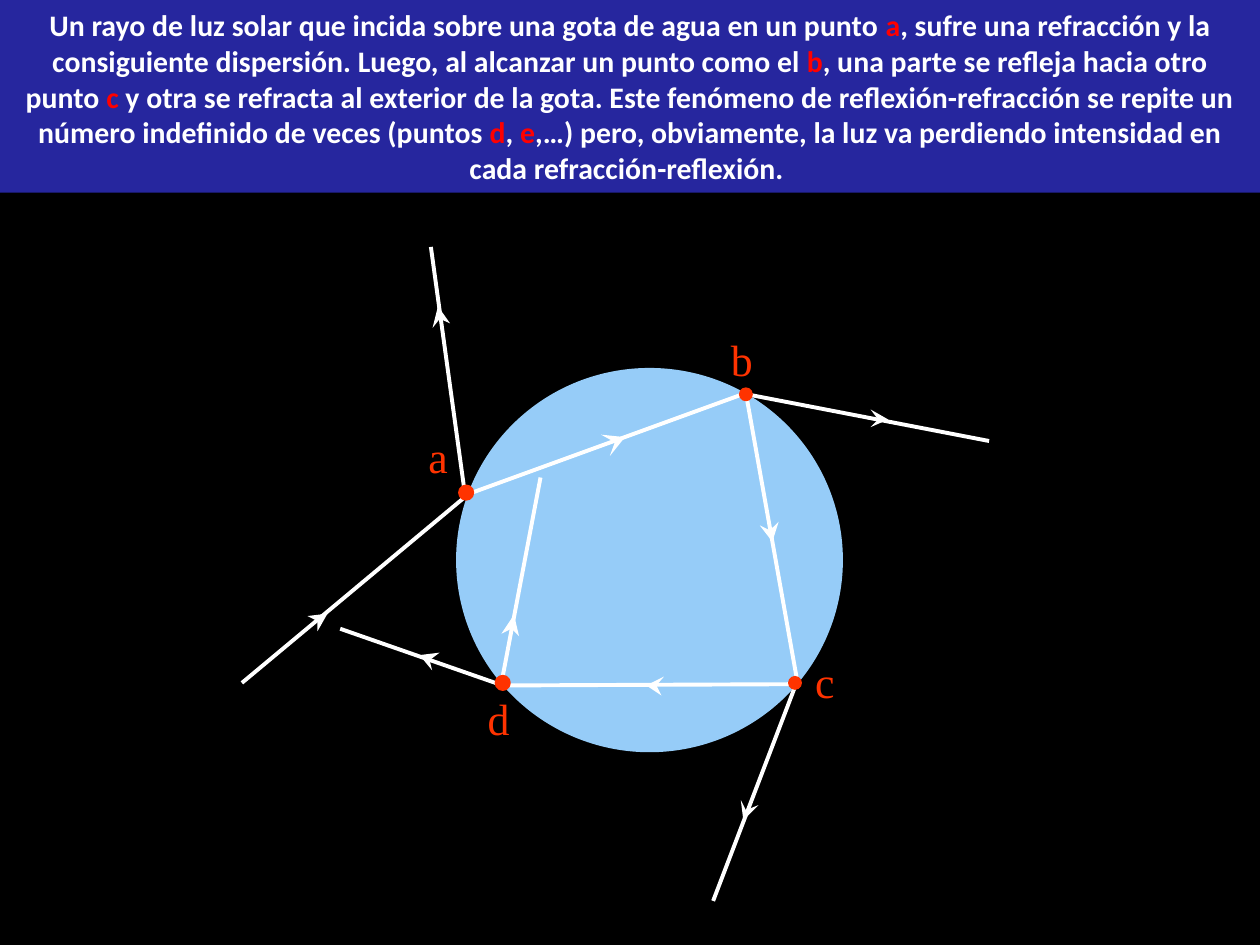
from lxml import etree
from pptx import Presentation
from pptx.dml.color import RGBColor
from pptx.enum.shapes import MSO_CONNECTOR, MSO_SHAPE
from pptx.enum.text import MSO_ANCHOR, MSO_AUTO_SIZE, PP_ALIGN
from pptx.oxml.ns import qn
from pptx.util import Inches, Pt

STRAIGHT = MSO_CONNECTOR.STRAIGHT
RECTANGLE, OVAL = MSO_SHAPE.RECTANGLE, MSO_SHAPE.OVAL
CENTER, MIDDLE = PP_ALIGN.CENTER, MSO_ANCHOR.MIDDLE
GROW, NO_FIT = MSO_AUTO_SIZE.SHAPE_TO_FIT_TEXT, MSO_AUTO_SIZE.NONE

COLORS = {"night": "000000", "banner": "26269E", "drop": "96CCF8",
          "ray": "FFFFFF", "text": "FFFFFF", "key": "FF0000", "point": "FF3300"}
RAY_WIDTH = 2.25
POINT_SIZE = 0.1

# Plain and highlighted pieces alternate
EXPLANATION = [
    "Un rayo de luz solar que incida sobre una gota de agua en un punto ", "a",
    ", sufre una refracción y la consiguiente dispersión. Luego, al alcanzar un punto como el ",
    "b", ", una parte se refleja hacia otro punto ", "c",
    " y otra se refracta al exterior de la gota. Este fenómeno de reflexión-refracción "
    "se repite un número indefinido de veces (puntos ", "d", ", ", "e",
    ",…) pero, obviamente, la luz va perdiendo intensidad en cada refracción-reflexión. ",
]

STRAIGHT_RAYS = [
    ((6.31, 5.45), (5.66, 7.15)),
    ((3.69, 3.92), (3.42, 1.96)),
    ((5.93, 3.13), (7.85, 3.5)),
    ((3.98, 5.42), (4.29, 3.79)),
]
BENT_RAYS = [
    [(1.92, 5.42), (3.72, 3.92), (5.92, 3.12), (6.33, 5.42)],
    [(6.32, 5.43), (3.99, 5.44), (2.7, 4.99)],
]

# Letter, label box, top left of the dot, outline width of the dot
POINTS = [
    ("a", (3.4, 3.41, 0.15, 0.42), (3.65, 3.86), 2),
    ("b", (5.8, 2.64, 0.17, 0.42), (5.87, 3.08), 0.75),
    ("c", (6.47, 5.2, 0.15, 0.42), (6.26, 5.37), 0.75),
    ("d", (3.87, 5.49, 0.17, 0.42), (3.94, 5.37), 2),
]

# Corners of each arrowhead, with its rotation in degrees
ARROWHEADS = [
    ([(3.98, 5.03), (4.08, 4.88), (4.12, 5.05), (4.06, 4.99)], 0),
    ([(3.43, 5.32), (3.33, 5.2), (3.49, 5.18), (3.41, 5.24)], 0),
    ([(5.25, 5.52), (5.13, 5.44), (5.27, 5.37), (5.21, 5.44)], 0),
    ([(6.02, 6.39), (5.9, 6.51), (5.88, 6.35), (5.92, 6.43)], 0),
    ([(6.18, 4.14), (6.13, 4.3), (6.03, 4.17), (6.11, 4.21)], 0),
    ([(4.77, 3.45), (4.96, 3.47), (4.84, 3.62), (4.88, 3.51)], 0),
    ([(6.91, 3.25), (7.05, 3.33), (6.91, 3.39), (6.97, 3.33)], 0),
    ([(2.44, 4.89), (2.6, 4.87), (2.52, 5.01), (2.52, 4.93)], 0),
    ([(3.43, 2.6), (3.48, 2.43), (3.57, 2.57), (3.49, 2.53)], 357.6),
]


def rgb(name):
    return RGBColor.from_string(COLORS[name])


def style_line(line, color, width):
    line.color.rgb = rgb(color)
    line.width = Pt(width)


def style_shape(shape, fill=None, line=None, width=0):
    """Set fill and outline; a missing colour means none."""
    shape.shadow.inherit = False
    if fill:
        shape.fill.solid()
        shape.fill.fore_color.rgb = rgb(fill)
    else:
        shape.fill.background()
    if line:
        style_line(shape.line, line, width)
    else:
        shape.line.fill.background()


def add_filled(slide, kind, box, fill, line=None, width=0):
    shape = slide.shapes.add_shape(kind, *map(Inches, box))
    style_shape(shape, fill, line, width)
    return shape


def add_run(paragraph, text, font, size, color, bold=False):
    run = paragraph.add_run()
    run.text = text
    run.font.name = font
    run.font.size = Pt(size)
    run.font.bold = bold
    run.font.color.rgb = rgb(color)


def add_banner(slide):
    frame = add_filled(slide, RECTANGLE, (0, 0, 10, 1.53), "banner").text_frame
    frame.word_wrap = True
    frame.auto_size = GROW
    frame.vertical_anchor = MIDDLE
    paragraph = frame.paragraphs[0]
    paragraph.alignment = CENTER
    for index, piece in enumerate(EXPLANATION):
        add_run(paragraph, piece, "Calibri", 17, "key" if index % 2 else "text", True)


def add_straight_ray(slide, start, end):
    ray = slide.shapes.add_connector(STRAIGHT, *map(Inches, start + end))
    style_line(ray.line, "ray", RAY_WIDTH)
    etree.SubElement(ray._element.spPr, qn("a:effectLst"))


def add_outline(slide, corners, close):
    start, *rest = [(Inches(x), Inches(y)) for x, y in corners]
    builder = slide.shapes.build_freeform(*start)
    builder.add_line_segments(rest, close=close)
    return builder.convert_to_shape()


def add_bent_ray(slide, corners):
    style_shape(add_outline(slide, corners, False), line="ray", width=RAY_WIDTH)


def add_arrowhead(slide, corners, rotation):
    arrowhead = add_outline(slide, corners, True)
    style_shape(arrowhead, fill="ray")
    arrowhead.rotation = rotation


def add_point(slide, letter, label_box, dot_corner, outline):
    frame = slide.shapes.add_textbox(*map(Inches, label_box)).text_frame
    frame.margin_left = frame.margin_right = frame.margin_top = frame.margin_bottom = 0
    frame.word_wrap = False
    frame.auto_size = NO_FIT
    add_run(frame.paragraphs[0], letter, "Times New Roman", 25, "point")
    add_filled(slide, OVAL, (*dot_corner, POINT_SIZE, POINT_SIZE), "point", "point", outline)


def main():
    deck = Presentation()
    deck.slide_width, deck.slide_height = Inches(10), Inches(7.5)
    slide = deck.slides.add_slide(deck.slide_layouts[6])
    slide.background.fill.solid()
    slide.background.fill.fore_color.rgb = rgb("night")

    add_filled(slide, OVAL, (3.62, 2.92, 3.07, 3.05), "drop")
    add_banner(slide)
    for start, end in STRAIGHT_RAYS:
        add_straight_ray(slide, start, end)
    for corners in BENT_RAYS:
        add_bent_ray(slide, corners)
    for point in POINTS:
        add_point(slide, *point)
    for corners, rotation in ARROWHEADS:
        add_arrowhead(slide, corners, rotation)
    deck.save("out.pptx")


if __name__ == "__main__":
    main()
